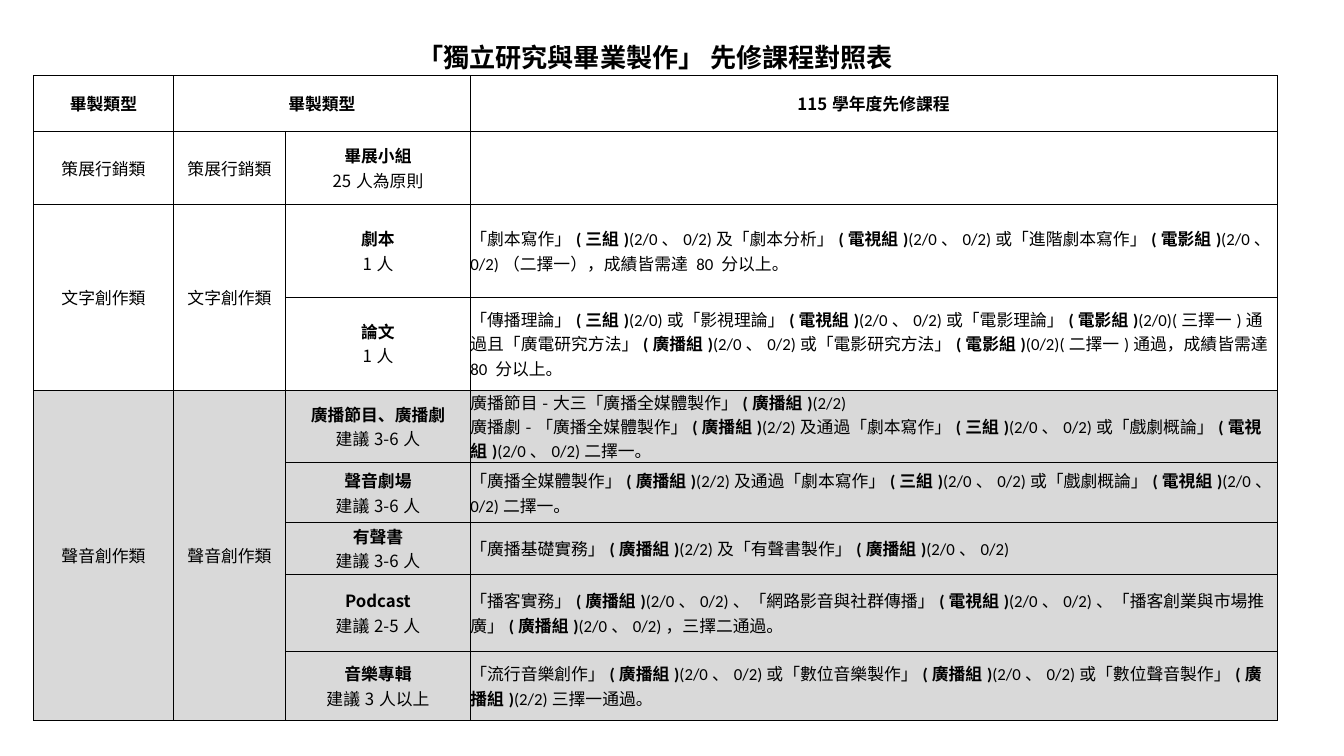
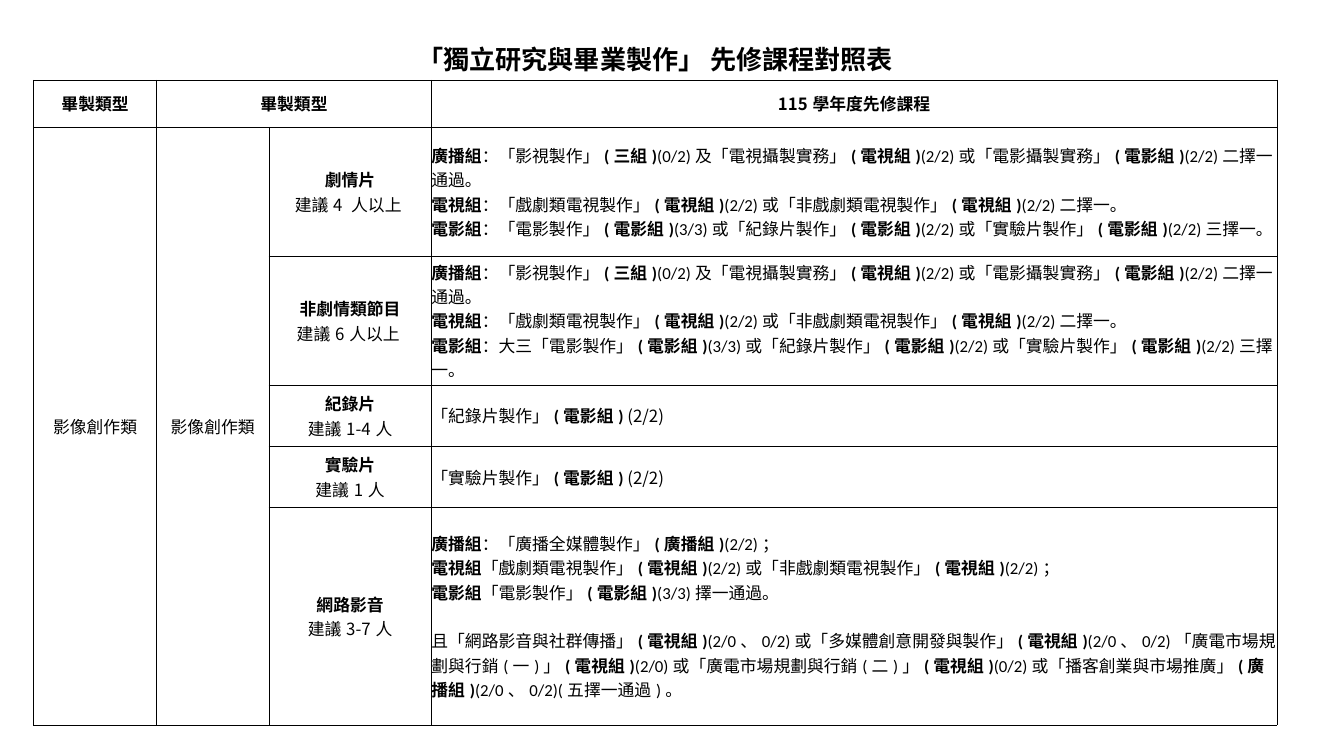
from dataclasses import dataclass

import pptx
import pptx.dml.color
import pptx.enum.text
import pptx.oxml
import pptx.oxml.ns
import pptx.util
from lxml import etree


@dataclass(frozen=True)
class Theme:
    ink: str = "000000"
    shade: str = "D9D9D9"
    heading_font: str = "Noto Sans CJK TC"
    course_font: str = "Calibri"
    title_size: int = 28
    text_size: int = 18
    blank_line: int = 26
    border: float = 0.5


THEME = Theme()
SLIDE_WIDTH, SLIDE_HEIGHT = 20, 11.25
TABLE_LEFT, TABLE_TOP = SLIDE_WIDTH * 0.025, SLIDE_HEIGHT * 0.048
CENTER = pptx.enum.text.PP_ALIGN.CENTER
LEFT = pptx.enum.text.PP_ALIGN.LEFT

TITLE = "*「獨立研究與畢業製作」 先修課程對照表*"
HEADERS = ["*畢製類型*", "*畢製類型*", "", "*115學年度先修課程*"]

# Markup: *bold*, ^ starts a part in the heading font, \v breaks the line,
# \n starts a paragraph, and + opens a paragraph set off by one line.
RADIO_DRAMA = "「廣播全媒體製作」*(廣播組)*(2/2)及通過「劇本寫作」*(三組)*(2/0、0/2)或「戲劇概論」*(電視組)*(2/0、0/2)二擇一。"
TV_CHOICE = "「戲劇類電視製作」*(電視組)*(2/2)或「非戲劇類電視製作」*(電視組)*(2/2)"
FILM_CHOICE = "「電影製作」*(電影組)*(3/3)或「紀錄片製作」*(電影組)*(2/2)或「實驗片製作」*(電影組)*(2/2)三擇一。"
VIDEO_START = (
    "*廣播組*：「影視製作」*(三組)*(0/2)及「電視攝製實務」*(電視組)*(2/2)或「電影攝製實務」*(電影組)*(2/2)二擇一通過。\n"
    f"*電視組*：{TV_CHOICE}二擇一。\n"
)

# Each group: category, fill, and (project, group size, courses) rows
PAGES = [
    dict(
        columns=[2.08, 1.67, 2.75, 12],
        rows=[0.58, 0.83, 1.09, 1.38, 1.38, 1.04, 0.89, 0.77, 1.14, 1.04],
        groups=[
            ("策展行銷類", None, [("畢展小組", "25人為原則", "")]),
            ("文字創作類", None, [
                ("劇本", "1人",
                 "「劇本寫作」*(三組)*(2/0、0/2)及「劇本分析」*(電視組)*(2/0、0/2)或「進階劇本寫作」"
                 "*(電影組)*(2/0、0/2)（二擇一），成績皆需達 80 分以上。"),
                ("論文", "1人",
                 "「傳播理論」*(三組)*(2/0)或「影視理論」*(電視組)*(2/0、0/2)或「電影理論」"
                 "*(電影組)*(2/0)(三擇一)通過且「廣電研究方法」*(廣播組)*(2/0、0/2)或「電影研究方法」"
                 "*(電影組)*(0/2)(二擇一)通過，成績皆需達 80 分以上。"),
            ]),
            ("聲音創作類", THEME.shade, [
                ("廣播節目、廣播劇", "建議3-6人",
                 f"^廣播節目-**大三「廣播全媒體製作」*(廣播組)*(2/2)\v**^廣播劇-**{RADIO_DRAMA}"),
                ("聲音劇場", "建議3-6人", RADIO_DRAMA),
                ("有聲書", "建議3-6人",
                 "「廣播基礎實務」*(廣播組)*(2/2)及「有聲書製作」*(廣播組)*(2/0、0/2)"),
                ("Podcast", "建議2-5人",
                 "「播客實務」*(廣播組)*(2/0、0/2)、「網路影音與社群傳播」*(電視組)*(2/0、0/2)、"
                 "「播客創業與市場推廣」*(廣播組)*(2/0、0/2)，三擇二通過。"),
                ("音樂專輯", "建議3人以上",
                 "「流行音樂創作」*(廣播組)*(2/0、0/2)或「數位音樂製作」*(廣播組)*(2/0、0/2)或"
                 "「數位聲音製作」*(廣播組)*(2/2)三擇一通過。"),
            ]),
        ],
    ),
    dict(
        columns=[1.83, 1.67, 2.42, 12.58],
        rows=[0.65, 0.7, 1.92, 1.92, 0.91, 0.91, 3.24],
        groups=[
            ("影像創作類", None, [
                ("劇情片", "建議4 人以上 ", f"{VIDEO_START}*電影組*：{FILM_CHOICE}"),
                ("非劇情類節目", "建議6人以上 ", f"{VIDEO_START}*電影組*：大三{FILM_CHOICE}"),
                ("紀錄片", "建議1-4人", "^「紀錄片製作」*(電影組) *^(2/2)"),
                ("實驗片", "建議1人", "^「實驗片製作」*(電影組) *^(2/2)"),
                ("網路影音", "建議3-7人",
                 "*廣播組*：「廣播全媒體製作」*(廣播組)*(2/2)；\n"
                 f"*電視組*{TV_CHOICE}；\n"
                 "*電影組*「電影製作」*(電影組)*(3/3)擇一通過。\n"
                 "+且「網路影音與社群傳播」*(電視組)*(2/0、0/2)或「多媒體創意開發與製作」"
                 "*(電視組)*(2/0、0/2)「廣電市場規劃與行銷(一)」*(電視組)*(2/0)或"
                 "「廣電市場規劃與行銷(二)」*(電視組)*(0/2)或「播客創業與市場推廣」"
                 "*(廣播組)*(2/0、0/2)(五擇一通過)。"),
            ]),
        ],
    ),
]


def write_cell(cell, markup, font, size, align):
    """Turn the markup described above into paragraphs and formatted runs."""
    frame = cell.text_frame
    for index, line in enumerate(markup.split("\n")):
        para = frame.add_paragraph() if index else frame.paragraphs[0]
        para.alignment = align
        para.font.size = pptx.util.Pt(size)
        if line.startswith("+"):
            para.space_before = pptx.util.Pt(THEME.blank_line)
        for number, part in enumerate(line.lstrip("+").split("*")):
            for row, words in enumerate(part.split("\v")):
                if row:
                    para.add_line_break()
                if not words:
                    continue
                span = para.add_run()
                span.text = words.lstrip("^")
                span.font.size = pptx.util.Pt(size)
                span.font.bold = number % 2 == 1
                span.font.color.rgb = pptx.dml.color.RGBColor.from_string(THEME.ink)
                span.font.name = THEME.heading_font if words.startswith("^") else font
                east_asian = etree.SubElement(span.font._element, pptx.oxml.ns.qn("a:ea"))
                east_asian.set("typeface", THEME.heading_font)


def style_cell(cell, fill, sides):
    """Draw the named sides (L, R, T, B), then fill the cell and drop its margins."""
    cell.margin_left = cell.margin_right = cell.margin_top = cell.margin_bottom = 0
    cell.vertical_anchor = pptx.enum.text.MSO_ANCHOR.MIDDLE
    properties = cell._tc.get_or_add_tcPr()
    for side in "LRTB":
        paint = f'<a:solidFill><a:srgbClr val="{THEME.ink}"/></a:solidFill>' if side in sides else "<a:noFill/>"
        properties.append(pptx.oxml.parse_xml(
            f'<a:ln{side} {pptx.oxml.ns.nsdecls("a")} w="{pptx.util.Pt(THEME.border)}">{paint}</a:ln{side}>'))
    if fill:
        cell.fill.solid()
        cell.fill.fore_color.rgb = pptx.dml.color.RGBColor.from_string(fill)
    else:
        cell.fill.background()


deck = pptx.Presentation()
deck.slide_width = pptx.util.Inches(SLIDE_WIDTH)
deck.slide_height = pptx.util.Inches(SLIDE_HEIGHT)
blank_layout = deck.slide_layouts[6]

for content in PAGES:
    page = deck.slides.add_slide(blank_layout)
    columns, rows = content["columns"], content["rows"]
    table = page.shapes.add_table(
        len(rows), len(columns),
        pptx.util.Inches(TABLE_LEFT), pptx.util.Inches(TABLE_TOP),
        pptx.util.Inches(sum(columns)), pptx.util.Inches(sum(rows))).table
    table.first_row = table.horz_banding = False
    for column, width in zip(table.columns, columns):
        column.width = pptx.util.Inches(width)
    for row, height in zip(table.rows, rows):
        row.height = pptx.util.Inches(height)

    # Title and header rows
    for column in range(len(columns)):
        style_cell(table.cell(0, column), None, "B")
        style_cell(table.cell(1, column), None, "LRTB")
        write_cell(table.cell(1, column), HEADERS[column], THEME.heading_font, THEME.text_size, CENTER)
    write_cell(table.cell(0, 0), TITLE, THEME.heading_font, THEME.title_size, CENTER)
    table.cell(0, 0).merge(table.cell(0, 3))
    table.cell(1, 1).merge(table.cell(1, 2))

    # Project rows, with both category columns merged down each group
    top = 2
    for category, fill, projects in content["groups"]:
        for row, (project, people, courses) in enumerate(projects, top):
            for column in range(len(columns)):
                style_cell(table.cell(row, column), fill, "LRTB")
            write_cell(table.cell(row, 2), f"*{project}*\v{people}", THEME.heading_font, THEME.text_size, CENTER)
            write_cell(table.cell(row, 3), courses, THEME.course_font, THEME.text_size, LEFT)
        bottom = top + len(projects) - 1
        for column in (0, 1):
            write_cell(table.cell(top, column), category, THEME.heading_font, THEME.text_size, CENTER)
            if bottom > top:
                table.cell(top, column).merge(table.cell(bottom, column))
        top = bottom + 1

deck.save("out.pptx")
